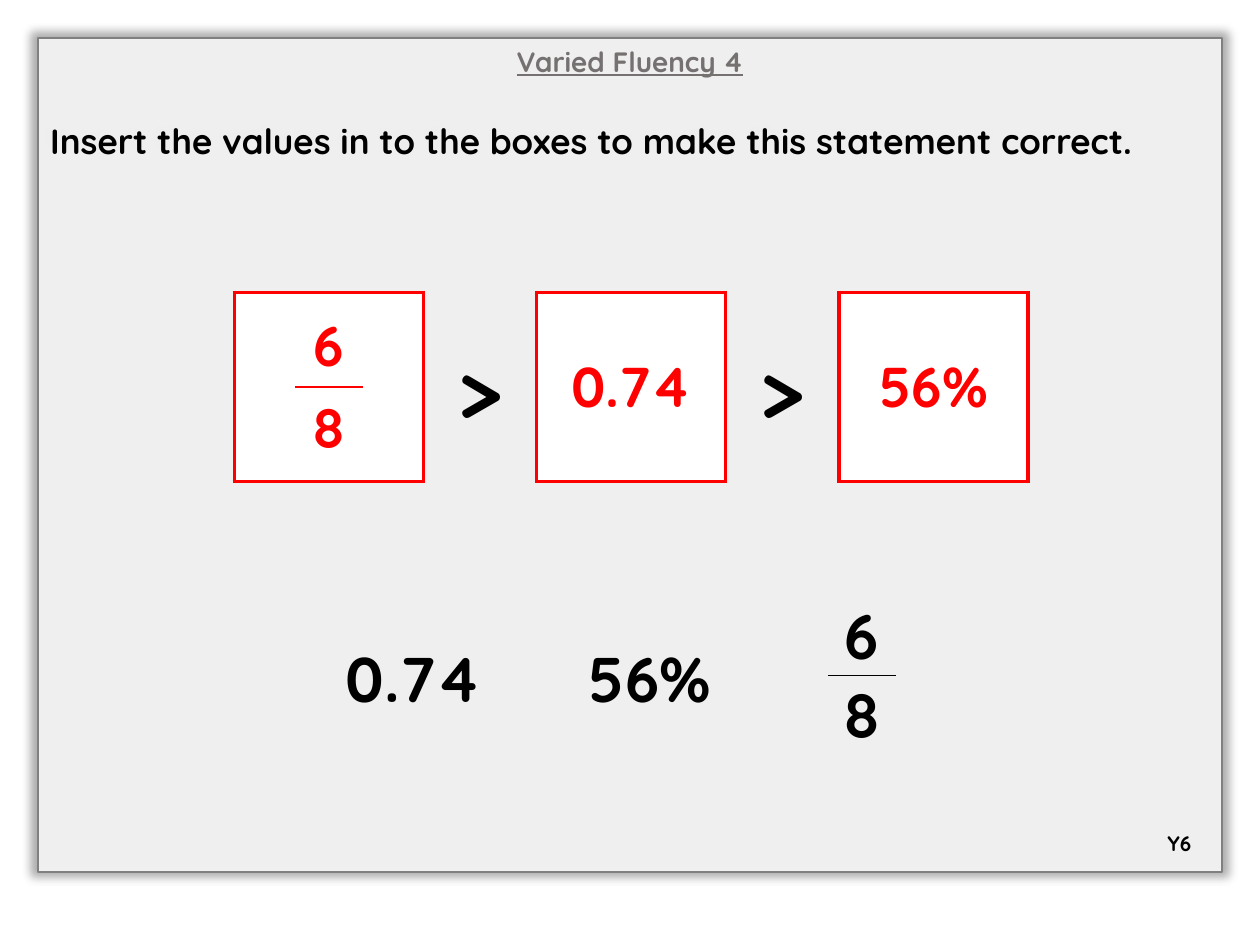
from lxml import etree
from pptx import Presentation
from pptx.dml.color import RGBColor
from pptx.enum.shapes import MSO_SHAPE
from pptx.enum.text import MSO_ANCHOR, PP_ALIGN
from pptx.oxml import parse_xml
from pptx.oxml.ns import nsdecls, qn
from pptx.util import Inches, Pt

CENTER, LEFT = PP_ALIGN.CENTER, PP_ALIGN.LEFT
TOP, MIDDLE, BOTTOM = MSO_ANCHOR.TOP, MSO_ANCHOR.MIDDLE, MSO_ANCHOR.BOTTOM
RECTANGLE = MSO_SHAPE.RECTANGLE
FONT = "Quicksand"
RED, BLACK, WHITE, GREY = "FF0000", "000000", "FFFFFF", "767171"
PLAIN_TABLE = "{2D5ABB26-0587-4C30-8999-92F81FD0307C}"
SLIDE_W, SLIDE_H = 10, 7.5
MARGIN = 0.3
BOX, GAP = 1.5, 0.9
BOX_LEFT, BOX_TOP = 1.86, 2.32
FRACTION_W = 0.54


def rgb(value):
    return RGBColor.from_string(value)


def write(tf, text, size, color=BLACK, align=CENTER, underline=False):
    p = tf.paragraphs[0]
    p.text = text
    p.alignment = align
    f = p.font
    f.name, f.size, f.bold, f.underline = FONT, Pt(size), True, underline
    f.color.rgb = rgb(color)


def add_panel(slide, text):
    sp = slide.shapes.add_shape(
        RECTANGLE, Inches(MARGIN), Inches(MARGIN),
        Inches(SLIDE_W - 2 * MARGIN), Inches(6.62))
    sp.fill.solid()
    sp.fill.fore_color.rgb = rgb(WHITE)
    sp.line.color.rgb = rgb("808080")
    sp.line.width = Pt(1)
    fill_color = sp.fill._xPr.find(qn("a:solidFill"))[0]
    etree.SubElement(fill_color, qn("a:alpha"), val="82000")
    sp._element.spPr.append(parse_xml(
        f'<a:effectLst {nsdecls("a")}><a:outerShdw blurRad="{Pt(5)}" dist="0" '
        f'sx="101000" sy="101000" algn="ctr" rotWithShape="0">'
        f'<a:srgbClr val="{BLACK}"><a:alpha val="40000"/></a:srgbClr>'
        f'</a:outerShdw></a:effectLst>'))
    tf = sp.text_frame
    tf.word_wrap = True
    tf.vertical_anchor = TOP
    tf.margin_top = Inches(0.65)
    write(tf, text, 20, align=LEFT)
    slide.shapes._spTree.insert(2, sp._element)


def set_title(slide, text):
    sp = slide.shapes.title
    sp.left, sp.top = Inches(MARGIN), Inches(MARGIN)
    sp.width, sp.height = Inches(SLIDE_W - 2 * MARGIN), Inches(0.4)
    sp.text_frame.vertical_anchor = TOP
    write(sp.text_frame, text, 16, GREY, underline=True)


def add_label(slide, text, left, top, width, height):
    sp = slide.shapes.add_textbox(
        Inches(left), Inches(top), Inches(width), Inches(height))
    tf = sp.text_frame
    tf.word_wrap = True
    tf.vertical_anchor = MIDDLE
    write(tf, text, 12)


def add_grid(slide, left, top, cols, rows):
    frame = slide.shapes.add_table(
        len(rows), len(cols), Inches(left), Inches(top),
        Inches(sum(cols)), Inches(sum(rows)))
    table = frame.table
    table.first_row = table.horz_banding = False
    table._tbl.tblPr.find(qn("a:tableStyleId")).text = PLAIN_TABLE
    for col, width in zip(table.columns, cols):
        col.width = Inches(width)
    for row, height in zip(table.rows, rows):
        row.height = Inches(height)
    return table


def set_cell(cell, text="", size=36, color=BLACK, anchor=MIDDLE, inset=0,
             fill=None, sides="", edge=RED, weight=1):
    cell.margin_left = cell.margin_right = Inches(inset)
    cell.margin_top = cell.margin_bottom = Inches(inset / 2)
    cell.vertical_anchor = anchor
    if text:
        write(cell.text_frame, text, size, color)
    tcPr = cell._tc.get_or_add_tcPr()
    for side in sides:
        tcPr.append(parse_xml(
            f'<a:ln{side} {nsdecls("a")} w="{Pt(weight)}"><a:solidFill>'
            f'<a:srgbClr val="{edge}"/></a:solidFill></a:ln{side}>'))
    if fill:
        cell.fill.solid()
        cell.fill.fore_color.rgb = rgb(fill)
    else:
        cell.fill.background()


def set_fraction(table, col, top, bottom, size, color, anchors):
    for row, (text, side) in enumerate(((top, "B"), (bottom, "T"))):
        set_cell(table.cell(row, col), text, size, color, anchors[row],
                 sides=side, edge=color)


def add_comparison(slide, entries):
    cols = [GAP if text == ">" else BOX for text in entries]
    table = add_grid(slide, BOX_LEFT, BOX_TOP, cols, [BOX])
    for i, text in enumerate(entries):
        cell = table.cell(0, i)
        if text == ">":
            set_cell(cell, text, 48, sides="LR", weight=2.25)
        else:
            set_cell(cell, text, 32, RED, fill=WHITE, sides="LRTB", weight=2.25)


def add_boxed_fraction(slide, top, bottom):
    row = 0.65
    table = add_grid(slide, BOX_LEFT + (BOX - FRACTION_W) / 2,
                     BOX_TOP + BOX / 2 - row, [FRACTION_W], [row] * 2)
    set_fraction(table, 0, top, bottom, 32, RED, (MIDDLE, MIDDLE))


def add_choices(slide, values, top, bottom):
    table = add_grid(slide, 2.34, 4.68, [1.88, 1.88, 0.47, FRACTION_W], [0.68] * 2)
    for col, text in enumerate([*values, ""]):
        table.cell(0, col).merge(table.cell(1, col))
        set_cell(table.cell(0, col), text, inset=0.11)
    set_fraction(table, 3, top, bottom, 36, BLACK, (BOTTOM, TOP))


def main():
    prs = Presentation()
    prs.slide_width, prs.slide_height = Inches(SLIDE_W), Inches(SLIDE_H)
    slide = prs.slides.add_slide(prs.slide_layouts[5])
    set_title(slide, "Varied Fluency 4")
    add_panel(slide, "Insert the values in to the boxes to make this statement correct.")
    add_comparison(slide, ["", ">", "0.74", ">", "56%"])
    add_choices(slide, ["0.74", "56%"], "6", "8")
    add_boxed_fraction(slide, "6", "8")
    add_label(slide, "Y6", 9.11, 6.54, 0.5, 0.3)
    prs.save("out.pptx")


if __name__ == "__main__":
    main()
